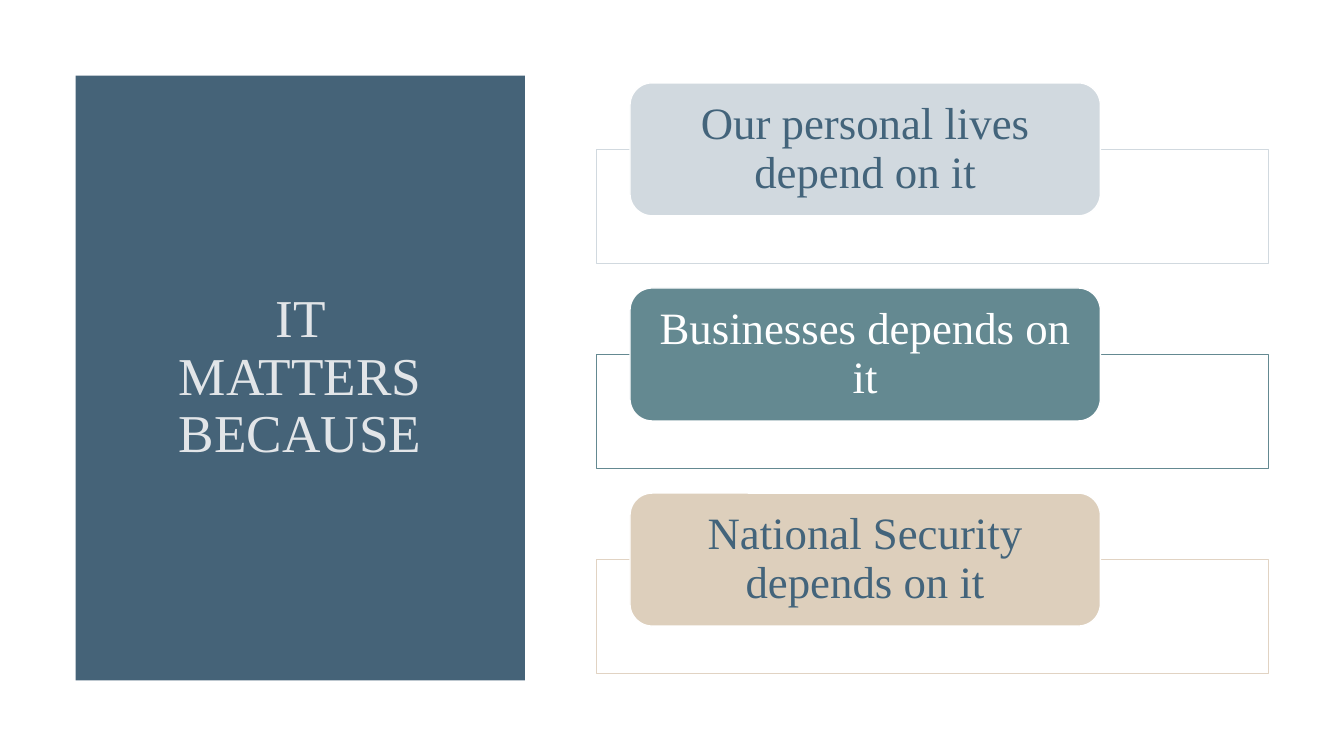
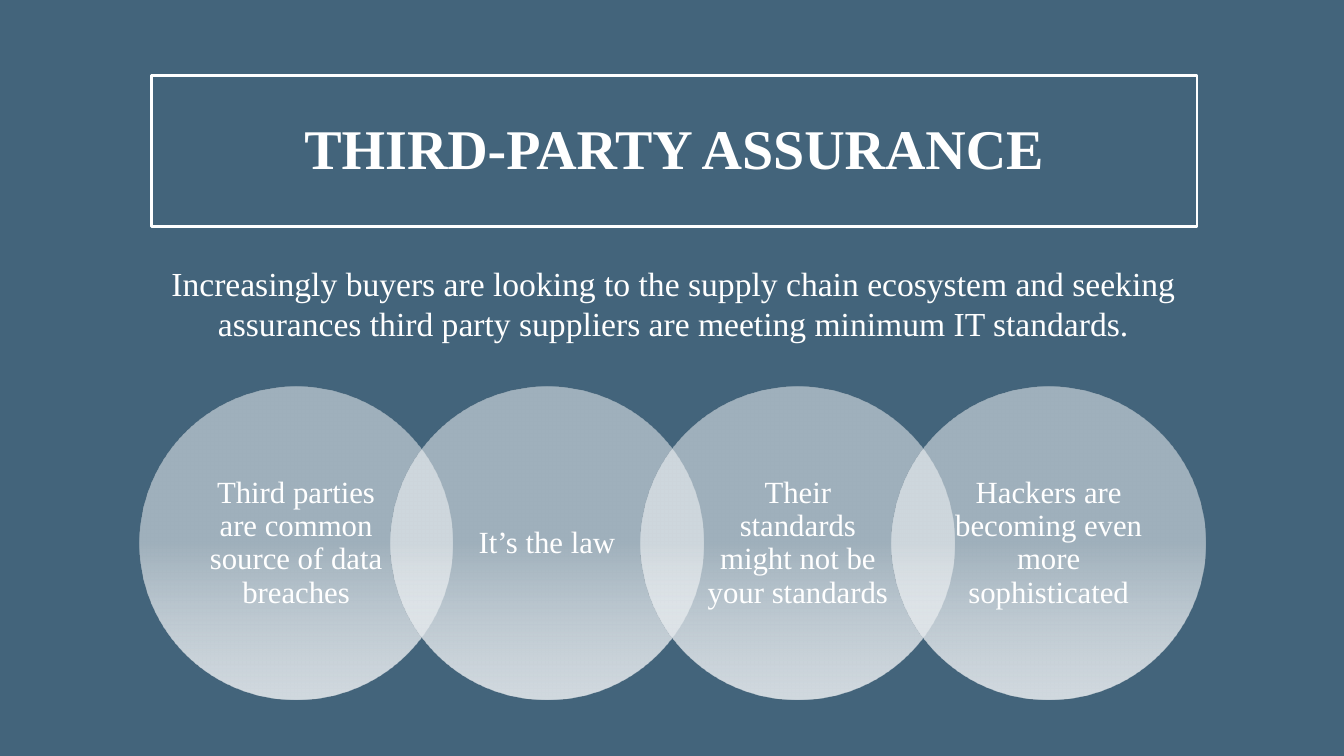
from lxml.etree import SubElement
from pptx import Presentation
from pptx.dml.color import RGBColor
from pptx.enum.shapes import MSO_SHAPE as Preset
from pptx.enum.text import MSO_ANCHOR as Anchor, MSO_AUTO_SIZE as AutoSize, PP_ALIGN as Align
from pptx.oxml.ns import qn
from pptx.util import Pt

FONT = "Times New Roman"
WHITE = "FFFFFF"
NAVY = "43647B"
PANEL = "456378"
TITLE_GREY = "E2E5E8"
MIST = "D1D9DF"
TEAL = "648991"
SAND = "DDCFBC"
SAND_LINE = "E1D3C3"
TITLE_ONLY = 5


def rgb(value):
    return RGBColor.from_string(value)


def set_opacity(color_element, percent):
    SubElement(color_element, qn("a:alpha")).set("val", str(percent * 1000))


class Deck:
    def __init__(self):
        self.presentation = Presentation()
        self.presentation.slide_width = Pt(960)
        self.presentation.slide_height = Pt(540)
        self.slide = None

    def add_slide(self, background):
        layout = self.presentation.slide_layouts[TITLE_ONLY]
        self.slide = self.presentation.slides.add_slide(layout)
        self.slide.background.fill.solid()
        self.slide.background.fill.fore_color.rgb = rgb(background)

    def set_text(self, shape, text, size, color, bold=False, spacing=0.9,
                 insets=(7.2, 3.6), anchor=Anchor.MIDDLE):
        frame = shape.text_frame
        frame.text = text
        frame.word_wrap = True
        frame.auto_size = AutoSize.NONE
        frame.vertical_anchor = anchor
        frame.margin_left = frame.margin_right = Pt(insets[0])
        frame.margin_top = frame.margin_bottom = Pt(insets[1])
        for paragraph in frame.paragraphs:
            paragraph.alignment = Align.CENTER
            paragraph.line_spacing = spacing
            for run in paragraph.runs:
                run.font.name = FONT
                run.font.size = Pt(size)
                run.font.bold = bold
                run.font.color.rgb = rgb(color)

    def paint(self, shape, fill=None, line=None, weight=1):
        if fill:
            shape.fill.solid()
            shape.fill.fore_color.rgb = rgb(fill)
        if line:
            shape.line.color.rgb = rgb(line)
            shape.line.width = Pt(weight)
        else:
            shape.line.fill.background()

    def title(self, box, text, size, color, fill=None, line=None, **style):
        title = self.slide.shapes.title
        title.left, title.top, title.width, title.height = map(Pt, box)
        self.paint(title, fill, line, 2)
        self.set_text(title, text, size, color, **style)

    def body(self, box, text, size, color):
        shape = self.slide.shapes.add_textbox(*map(Pt, box))
        self.set_text(shape, text, size, color, spacing=1.0, anchor=Anchor.TOP)

    def shape(self, preset, box, fill=None, line=None):
        shape = self.slide.shapes.add_shape(preset, *map(Pt, box))
        shape.shadow.inherit = False
        self.paint(shape, fill, line)
        return shape

    def frame(self, box, line):
        shape = self.shape(Preset.RECTANGLE, box, WHITE, line)
        set_opacity(shape.element.spPr.find(".//" + qn("a:srgbClr")), 89)

    def pill(self, box, text, fill, color):
        shape = self.shape(Preset.ROUNDED_RECTANGLE, box, fill, WHITE)
        self.set_text(shape, text, 32, color, insets=(13, 0))

    def circle(self, left, top, diameter, text):
        shape = self.shape(Preset.OVAL, (left, top, diameter, diameter))
        shape.fill.gradient()
        shape.fill.gradient_angle = 270
        stops = shape.element.spPr.find(".//" + qn("a:gsLst"))
        for stop in list(stops):
            stops.remove(stop)
        for position, color, opacity in ((0, WHITE, 49), (50, WHITE, 49), (100, MIST, 100)):
            stop = SubElement(stops, qn("a:gs"))
            stop.set("pos", str(position * 1000))
            color_element = SubElement(stop, qn("a:srgbClr"))
            color_element.set("val", color)
            if opacity < 100:
                set_opacity(color_element, opacity)
        self.set_text(shape, text, 22, WHITE, insets=(12.3, 2))


def build_reasons(deck):
    deck.add_slide(WHITE)
    deck.title((54, 54, 321, 432), "IT MATTERS BECAUSE", 38, TITLE_GREY,
               fill=PANEL, insets=(61.2, 54))
    reasons = (
        ("Our personal lives depend on it", MIST, MIST, NAVY),
        ("Businesses depends on it", TEAL, TEAL, WHITE),
        ("National Security depends on it", SAND, SAND_LINE, NAVY),
    )
    for index, (text, fill, line, color) in enumerate(reasons):
        top = 59.2 + index * 146.5
        deck.frame((426, top + 47.5, 480, 81.5), line)
        deck.pill((450, top, 336, 95), text, fill, color)


def build_assurance(deck):
    deck.add_slide(NAVY)
    deck.title((108, 54, 747, 108), "THIRD-PARTY ASSURANCE", 40, WHITE,
               line=WHITE, bold=True)
    deck.body((97, 184.3, 768, 70),
              "Increasingly buyers are looking to the supply chain ecosystem and seeking "
              "assurances third party suppliers are meeting minimum IT standards.", 24, WHITE)
    drivers = (
        "Third parties are common source of data breaches",
        "It’s the law",
        "Their standards might not be your standards",
        "Hackers are becoming even more sophisticated",
    )
    diameter = 224
    for index, text in enumerate(drivers):
        deck.circle(99.5 + index * diameter * 0.8, 276, diameter, text)


def main():
    deck = Deck()
    build_reasons(deck)
    build_assurance(deck)
    deck.presentation.save("out.pptx")


if __name__ == "__main__":
    main()
